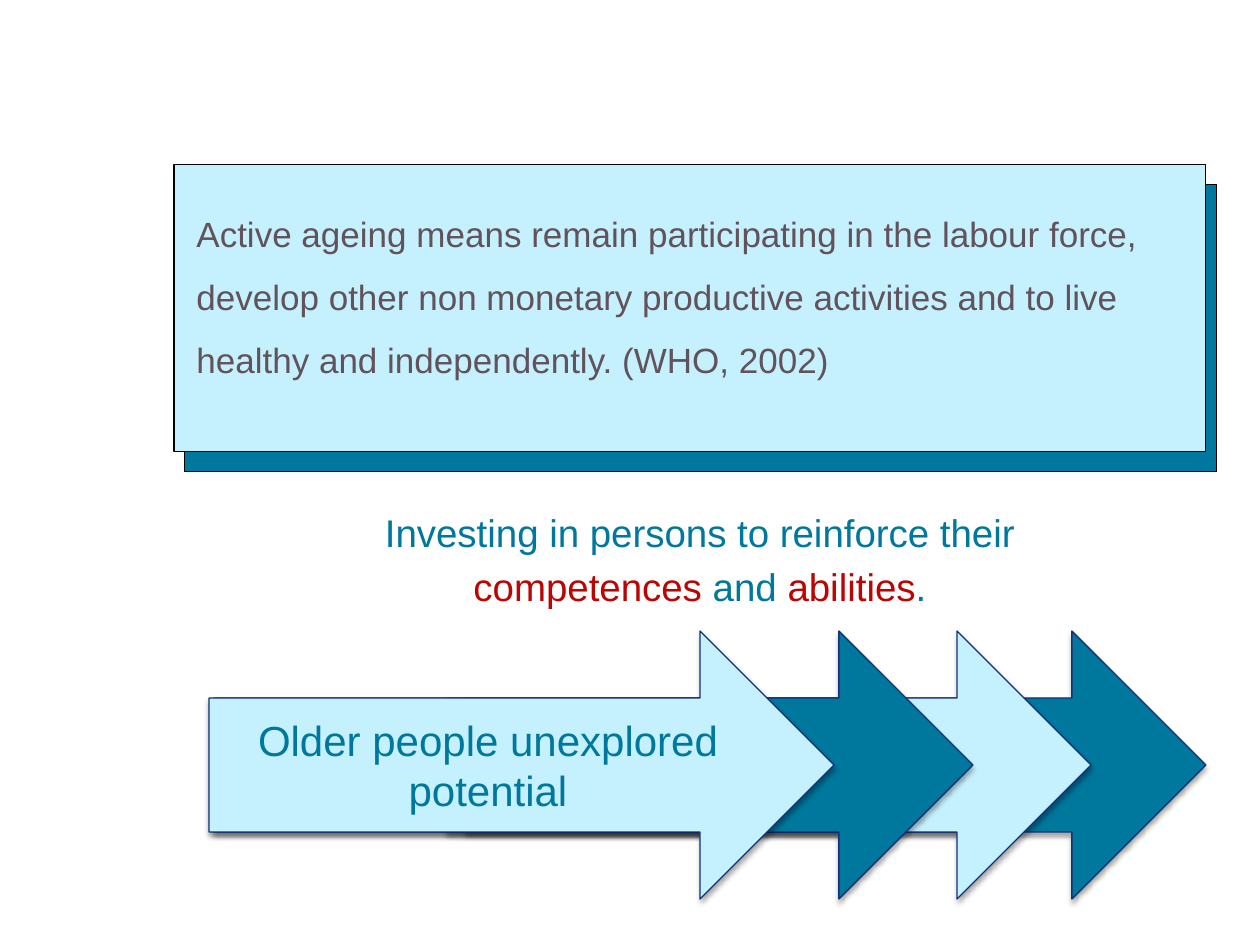
from lxml import etree
from pptx import Presentation
from pptx.dml.color import RGBColor
from pptx.enum.shapes import MSO_SHAPE as Shape
from pptx.enum.text import MSO_ANCHOR as Anchor, PP_ALIGN as Align
from pptx.oxml import parse_xml
from pptx.oxml.ns import nsdecls, qn
from pptx.util import Emu, Pt

COLORS = {
    "teal": "00789E",
    "pale": "C5F1FF",
    "navy": "133176",
    "black": "000000",
    "gray": "62525A",
    "red": "BB0503",
}
ARROW_TOP, ARROW_HEIGHT = 631, 268
CARD_WIDTH, CARD_HEIGHT = 1032, 287


def px(length):
    return Emu(round(length * 914400 / 126))


def color(name):
    return RGBColor.from_string(COLORS[name])


def add_block(page, kind, left, top, width, height, fill, line, weight):
    block = page.shapes.add_shape(kind, px(left), px(top), px(width), px(height))
    block.shadow.inherit = False
    block.fill.solid()
    block.fill.fore_color.rgb = color(fill)
    block.line.color.rgb = color(line)
    block.line.width = Pt(weight)
    return block


def add_card(page, left, top, fill):
    return add_block(page, Shape.RECTANGLE, left, top, CARD_WIDTH, CARD_HEIGHT,
                     fill, "black", 0.63)


def add_shadow(block):
    effects = block._element.spPr.find(qn("a:effectLst"))
    shadow = parse_xml(
        f'<a:outerShdw {nsdecls("a")} blurRad="{Pt(3.1)}" dist="{Pt(1.8)}" '
        f'dir="5400000" rotWithShape="0"/>')
    tint = etree.SubElement(shadow, qn("a:srgbClr"), val=COLORS["black"])
    etree.SubElement(tint, qn("a:alpha"), val="35000")
    effects.append(shadow)


def add_arrow(page, left, width, fill):
    arrow = add_block(page, Shape.RIGHT_ARROW, left, ARROW_TOP, width,
                      ARROW_HEIGHT, fill, "navy", 0.75)
    add_shadow(arrow)
    return arrow


def add_box(page, left, top, width, height):
    return page.shapes.add_textbox(px(left), px(top), px(width), px(height))


def write(box, text, size, align=Align.LEFT, anchor=Anchor.TOP,
          line_spacing=None, gap=0):
    frame = box.text_frame
    frame.word_wrap = True
    frame.vertical_anchor = anchor
    for index, spans in enumerate(text):
        para = frame.paragraphs[0] if index == 0 else frame.add_paragraph()
        para.alignment = align
        para.line_spacing = line_spacing
        if index:
            para.space_before = Pt(gap)
        for words, tone in spans:
            span = para.add_run()
            span.text = words
            span.font.name = "Arial"
            span.font.size = Pt(size)
            span.font.color.rgb = color(tone)


def main():
    deck = Presentation()
    deck.slide_width, deck.slide_height = px(1260), px(945)
    page = deck.slides.add_slide(deck.slide_layouts[6])

    add_arrow(page, 447, 759, "teal")
    add_arrow(page, 466, 625, "pale")

    add_card(page, 185, 185, "teal")
    add_card(page, 174, 165, "pale")
    definition = add_box(page, 184, 185, 1012, 248)
    write(definition, [[(
        "Active ageing means remain participating in the labour force, "
        "develop other non monetary productive activities and to live "
        "healthy and independently. (WHO, 2002)", "gray")]],
        size=20, line_spacing=1.5)

    add_arrow(page, 214, 759, "teal")
    potential = add_arrow(page, 209, 625, "pale")
    write(potential, [[("Older people unexplored", "teal")],
                      [("potential", "teal")]],
          size=24, align=Align.CENTER, anchor=Anchor.MIDDLE)

    investing = add_box(page, 184, 503, 1032, 128)
    write(investing, [
        [("Investing in persons to reinforce their", "teal")],
        [("competences", "red"), (" and ", "teal"),
         ("abilities", "red"), (".", "teal")],
    ], size=22, align=Align.CENTER, gap=4.4)

    deck.save("out.pptx")


if __name__ == "__main__":
    main()
